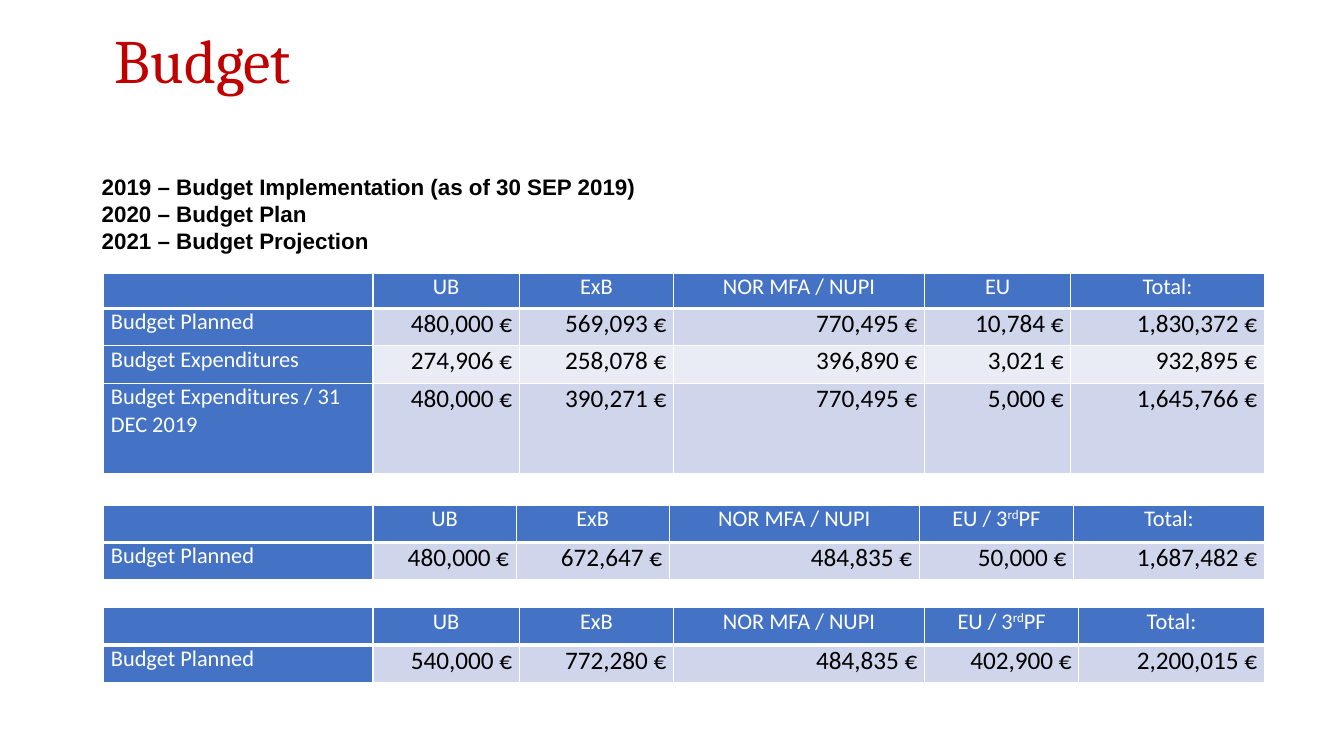
from lxml.etree import SubElement
from pptx import Presentation
from pptx.dml.color import RGBColor
from pptx.enum.text import MSO_ANCHOR, PP_ALIGN
from pptx.oxml.ns import qn
from pptx.util import Inches, Pt


def color(hex_string):
    return RGBColor.from_string(hex_string)


class BudgetSlide:
    BLUE, WHITE, BLACK, RED = "4472C4", "FFFFFF", "000000", "C00000"
    BANDS = ("CFD5EA", "E9EBF5")
    TABLE_LEFT, TABLE_WIDTH = 7.73, 86.35

    def __init__(self, deck):
        self.width, self.height = deck.slide_width, deck.slide_height
        self.slide = deck.slides.add_slide(deck.slide_layouts[6])

    def x(self, percent):
        return round(self.width * percent / 100)

    def y(self, percent):
        return round(self.height * percent / 100)

    def style(self, paragraph, font, size, tint, bold=False):
        paragraph.font.name = font
        paragraph.font.size = Pt(size)
        paragraph.font.bold = bold
        paragraph.font.color.rgb = color(tint)

    def text(self, left, top, width, height, lines, font, size, tint,
             bold=False, wrap=True, anchor=MSO_ANCHOR.TOP, spacing=None):
        box = self.slide.shapes.add_textbox(
            self.x(left), self.y(top), self.x(width), self.y(height))
        frame = box.text_frame
        frame.word_wrap = wrap
        frame.vertical_anchor = anchor
        frame.text = "\n".join(lines)
        for paragraph in frame.paragraphs:
            paragraph.line_spacing = spacing
            self.style(paragraph, font, size, tint, bold)

    def borders(self, cell, bottom):
        properties = cell._tc.get_or_add_tcPr()
        for side, points in zip("LRTB", (1, 1, 1, bottom)):
            line = SubElement(properties, qn(f"a:ln{side}"), w=str(Pt(points)))
            fill = SubElement(line, qn("a:solidFill"))
            SubElement(fill, qn("a:srgbClr"), val=self.WHITE)

    def cell(self, cell, content, row, column):
        is_header, is_label = row == 0, column == 0
        cell.margin_left = cell.margin_right = Inches(0.07)
        cell.margin_top = cell.margin_bottom = 0
        self.borders(cell, 3 if is_header else 1)
        cell.fill.solid()
        on_blue = is_header or is_label
        band = self.BANDS[(row - 1) % 2]
        cell.fill.fore_color.rgb = color(self.BLUE if on_blue else band)
        paragraph = cell.text_frame.paragraphs[0]
        if is_header:
            paragraph.alignment = PP_ALIGN.CENTER
        elif not is_label:
            paragraph.alignment = PP_ALIGN.RIGHT
        self.style(paragraph, "Calibri", 16 if on_blue else 18,
                   self.WHITE if on_blue else self.BLACK)
        for index, part in enumerate(content.split("^") if content else []):
            run = paragraph.add_run()
            run.text = part
            if index % 2:
                run._r.get_or_add_rPr().set("baseline", "30000")

    def table(self, top, columns, heights, eu_header, budget):
        header = ["", "UB", "ExB", "NOR MFA / NUPI", eu_header, "Total:"]
        rows = [header] + [
            [label] + [f"{amount:,} €" for amount in amounts]
            for label, amounts in budget.items()]
        widths = columns + [self.TABLE_WIDTH - sum(columns)]
        table = self.slide.shapes.add_table(
            len(rows), len(header), self.x(self.TABLE_LEFT), self.y(top),
            self.x(self.TABLE_WIDTH), self.y(sum(heights))).table
        for column, width in zip(table.columns, widths):
            column.width = self.x(width)
        for row, height in zip(table.rows, heights):
            row.height = self.y(height)
        for r, row in enumerate(rows):
            for c, content in enumerate(row):
                self.cell(table.cell(r, c), content, r, c)


def main():
    deck = Presentation()
    deck.slide_width, deck.slide_height = Inches(13.33), Inches(7.5)
    page = BudgetSlide(deck)
    row = 4.96
    page.text(7.8, 0.67, 86.27, 15.47, ["Budget"], "Cambria", 44, page.RED,
              anchor=MSO_ANCHOR.MIDDLE, spacing=0.9)
    page.table(36.13, [20.03, 10.88, 11.48, 18.68, 10.88],
               [4.67, row, row, 12], "EU", {
        "Budget Planned": (480000, 569093, 770495, 10784, 1830372),
        "Budget Expenditures": (274906, 258078, 396890, 3021, 932895),
        "Budget Expenditures / 31 DEC 2019":
            (480000, 390271, 770495, 5000, 1645766),
    })
    page.table(66.8, [20.03, 10.65, 11.4, 18.6, 11.48], [row, row],
               "EU / 3^rd^PF",
               {"Budget Planned": (480000, 672647, 484835, 50000, 1687482)})
    page.table(80.4, [20.03, 10.88, 11.48, 18.68, 11.48], [row, row],
               "EU / 3^rd^PF",
               {"Budget Planned": (540000, 772280, 484835, 402900, 2200015)})
    page.text(6.83, 22.27, 41.71, 16.13, [
        "2019 – Budget Implementation (as of 30 SEP 2019)",
        "2020 – Budget Plan",
        "2021 – Budget Projection",
    ], "Arial", 16, page.BLACK, bold=True, wrap=False)
    deck.save("out.pptx")


if __name__ == "__main__":
    main()
